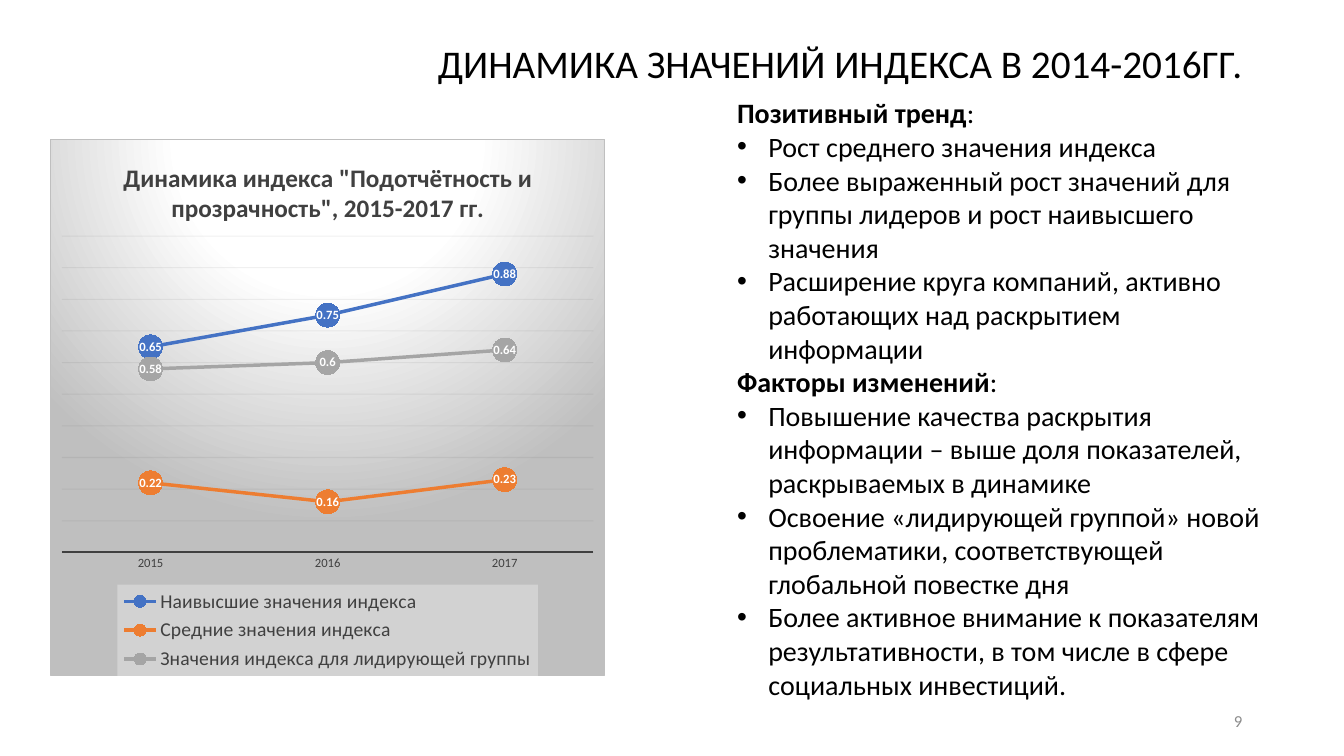
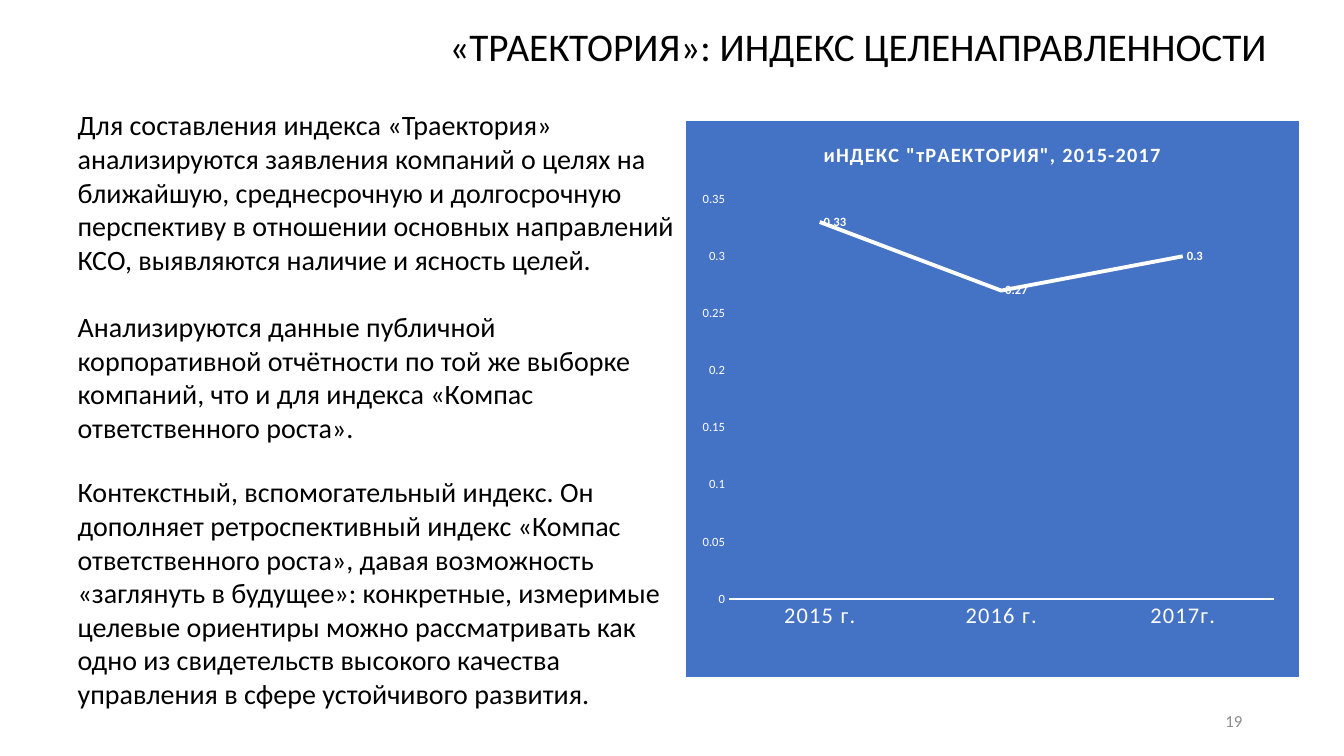
from pptx import Presentation
from pptx.chart.data import CategoryChartData
from pptx.dml.color import RGBColor
from pptx.enum.chart import XL_CHART_TYPE as ChartType
from pptx.enum.chart import XL_LABEL_POSITION as LabelPosition
from pptx.enum.chart import XL_LEGEND_POSITION as LegendPosition
from pptx.enum.chart import XL_MARKER_STYLE as MarkerStyle
from pptx.enum.chart import XL_TICK_MARK as TickMark
from pptx.enum.text import MSO_ANCHOR as Anchor
from pptx.enum.text import MSO_AUTO_SIZE as AutoSize
from pptx.enum.text import PP_ALIGN as Align
from pptx.oxml import parse_xml
from pptx.oxml.ns import nsdecls
from pptx.util import Inches, Pt

FONT = "Calibri"
BLACK = RGBColor(0x00, 0x00, 0x00)
WHITE = RGBColor(0xFF, 0xFF, 0xFF)
DARK_GREY = RGBColor(0x40, 0x40, 0x40)
NUMBER_GREY = RGBColor(0x8C, 0x8C, 0x8C)
GRID = RGBColor(0x0D, 0x0D, 0x0D)
SILVER = RGBColor(0xBF, 0xBF, 0xBF)
BLUE = RGBColor(0x44, 0x72, 0xC4)
ORANGE = RGBColor(0xED, 0x7D, 0x31)
GREY = RGBColor(0xA5, 0xA5, 0xA5)
NAMESPACES = nsdecls("a", "c")


def write_text(frame, text, tail="", size=20, color=BLACK, bold=False, align=None,
               line_spacing=None, before=0, bullet=False, plain=False):
    """Fill the empty first paragraph or add one; the tail is never bold."""
    paragraph = frame.paragraphs[-1]
    if paragraph.runs:
        paragraph = frame.add_paragraph()
    paragraph.alignment = align
    paragraph.line_spacing = line_spacing
    paragraph.space_before = Pt(before)
    for part, weight in ((text, bold), (tail, False)):
        if part:
            run = paragraph.add_run()
            run.text = part
            font = run.font
            font.name, font.size, font.bold = FONT, Pt(size), weight
            font.color.rgb = color
    if bullet or plain:
        properties = paragraph._p.get_or_add_pPr()
        indent = Inches(0.31) if bullet else 0
        properties.set("marL", str(indent))
        properties.set("indent", str(-indent))
        mark = '<a:buChar %s char="•"/>' if bullet else "<a:buNone %s/>"
        properties.append(parse_xml(mark % nsdecls("a")))


def add_line_chart(slide, box, kind, title, title_size, categories, series_list,
                   color, category_size, axis_width, label_position, top, step,
                   plot_box, fill_xml, border):
    """Add a line chart; series_list holds (name, values, colour, width)."""
    data = CategoryChartData()
    data.categories = categories
    for name, values, *_ in series_list:
        data.add_series(name, values)
    chart = slide.shapes.add_chart(kind, *[Inches(v) for v in box], data).chart
    chart.font.name, chart.font.size = FONT, Pt(10)
    chart.has_legend = False
    chart.has_title = True
    write_text(chart.chart_title.text_frame, title, size=title_size, color=color, bold=True)

    # Axes
    category_axis, value_axis = chart.category_axis, chart.value_axis
    for axis, size in ((category_axis, category_size), (value_axis, 9)):
        axis.major_tick_mark = axis.minor_tick_mark = TickMark.NONE
        font = axis.tick_labels.font
        font.name, font.size = FONT, Pt(size)
        font.color.rgb = color
    category_axis.format.line.color.rgb = color
    category_axis.format.line.width = Pt(axis_width)
    value_axis.format.line.fill.background()
    value_axis.has_major_gridlines = False
    value_axis.minimum_scale, value_axis.maximum_scale = 0, top
    value_axis.major_unit = step

    # Series and their labels
    for series, (_, _, line_color, width) in zip(chart.plots[0].series, series_list):
        series.smooth = False
        series.format.line.color.rgb = line_color
        series.format.line.width = Pt(width)
        labels = series.data_labels
        labels.show_value = True
        labels.position = label_position
        labels.font.name, labels.font.size, labels.font.bold = FONT, Pt(9), True
        labels.font.color.rgb = WHITE

    # Plot area and background
    plot_area = chart.element.xpath("c:chart/c:plotArea")[0]
    for layout in plot_area.xpath("c:layout"):
        plot_area.remove(layout)
    sizes = "".join(f'<c:{key} val="{value}"/>' for key, value in zip("xywh", plot_box))
    plot_area.insert(0, parse_xml(
        f'<c:layout {NAMESPACES}><c:manualLayout><c:layoutTarget val="inner"/>'
        f'<c:xMode val="edge"/><c:yMode val="edge"/>{sizes}</c:manualLayout></c:layout>'))
    chart.element.xpath("c:chart")[0].addnext(parse_xml(
        f'<c:spPr {NAMESPACES}>{fill_xml}<a:ln w="9525"><a:solidFill>'
        f'<a:srgbClr val="{border}"/></a:solidFill></a:ln></c:spPr>'))
    return chart


presentation = Presentation()
presentation.slide_width = Inches(13.33)
presentation.slide_height = Inches(7.5)

# Title, page number and body frame of both slides
pages = [
    ("ДИНАМИКА ЗНАЧЕНИЙ ИНДЕКСА В 2014-2016ГГ.", (0.92, 0.4, 11.5, 0.5), "9",
     (7.21, 0.9, 5.5, 6.5)),
    ("«ТРАЕКТОРИЯ»: ИНДЕКС ЦЕЛЕНАПРАВЛЕННОСТИ", (1.16, -0.24, 11.5, 1.45), "19",
     (0.67, 1.02, 6.12, 6.13)),
]
slides, bodies = [], []
for title_text, title_box, number, body_box in pages:
    slide = presentation.slides.add_slide(presentation.slide_layouts[1])
    title, body = slide.shapes.title, slide.placeholders[1]
    number_box = slide.shapes.add_textbox(Inches(9.42), Inches(6.95), Inches(3), Inches(0.4))
    for shape, box in ((title, title_box), (body, body_box)):
        shape.left, shape.top, shape.width, shape.height = [Inches(v) for v in box]
    for shape, anchor in ((title, Anchor.MIDDLE), (body, Anchor.TOP),
                          (number_box, Anchor.MIDDLE)):
        shape.text_frame.word_wrap = True
        shape.text_frame.auto_size = AutoSize.NONE
        shape.text_frame.vertical_anchor = anchor
    write_text(title.text_frame, title_text, size=28, align=Align.RIGHT, line_spacing=0.9)
    write_text(number_box.text_frame, number, size=12, color=NUMBER_GREY, align=Align.RIGHT)
    slides.append(slide)
    bodies.append(body.text_frame)

# Slide 1: trends and their causes
trends = [
    ("Позитивный тренд", [
        "Рост среднего значения индекса",
        "Более выраженный рост значений для группы лидеров и рост наивысшего значения",
        "Расширение круга компаний, активно работающих над раскрытием информации"]),
    ("Факторы изменений", [
        "Повышение качества раскрытия информации – выше доля показателей, "
        "раскрываемых в динамике",
        "Освоение «лидирующей группой» новой проблематики, соответствующей "
        "глобальной повестке дня",
        "Более активное внимание к показателям результативности, в том числе "
        "в сфере социальных инвестиций."]),
]
for heading, points in trends:
    write_text(bodies[0], heading, tail=":", bold=True, plain=True)
    for point in points:
        write_text(bodies[0], point, bullet=True)

# Slide 1: chart of three series
stops = "".join(f'<a:gs pos="{position}000"><a:srgbClr val="{color}"/></a:gs>'
                for position, color in ((0, WHITE), (39, WHITE), (100, SILVER)))
gradient = (f'<a:gradFill><a:gsLst>{stops}</a:gsLst><a:path path="circle">'
            '<a:fillToRect l="50000" t="-80000" r="50000" b="180000"/></a:path></a:gradFill>')
index_chart = add_line_chart(
    slides[0], (0.5, 1.38, 5.5, 5.33), ChartType.LINE_MARKERS,
    'Динамика индекса "Подотчётность и прозрачность", 2015-2017 гг.', 18,
    ["2015", "2016", "2017"],
    [("Наивысшие значения индекса", (0.65, 0.75, 0.88), BLUE, 2.5),
     ("Средние значения индекса", (0.22, 0.16, 0.23), ORANGE, 2.5),
     ("Значения индекса для лидирующей группы", (0.58, 0.6, 0.64), GREY, 2.5)],
    color=DARK_GREY, category_size=9, axis_width=1.5, label_position=LabelPosition.CENTER,
    top=1, step=0.1, plot_box=(0.02, 0.18, 0.96, 0.59), fill_xml=gradient, border=SILVER)
for series, color in zip(index_chart.plots[0].series, (BLUE, ORANGE, GREY)):
    series.marker.style, series.marker.size = MarkerStyle.CIRCLE, 17
    series.marker.format.fill.solid()
    series.marker.format.fill.fore_color.rgb = color
    series.marker.format.line.fill.background()

# Faint grid lines without a value axis
value_axis = index_chart.value_axis
value_axis.visible = False
value_axis.has_major_gridlines = True
value_axis.major_gridlines.format.line.color.rgb = GRID
value_axis.major_gridlines.format.line.width = Pt(0.75)
grid_color = index_chart.element.xpath(".//c:majorGridlines//a:srgbClr")[0]
grid_color.append(parse_xml(f'<a:alpha {NAMESPACES} val="5000"/>'))

# Legend on a translucent panel
index_chart.has_legend = True
legend = index_chart.legend
legend.position = LegendPosition.BOTTOM
legend.include_in_layout = False
legend.font.name, legend.font.size = FONT, Pt(14)
legend.font.color.rgb = DARK_GREY
legend_element = index_chart.element.xpath("c:chart/c:legend")[0]
for layout in legend_element.xpath("c:layout"):
    legend_element.remove(layout)
legend_sizes = "".join(f'<c:{key} val="{value}"/>'
                       for key, value in zip("xywh", (0.12, 0.83, 0.76, 0.17)))
legend_element.xpath("c:legendPos")[0].addnext(parse_xml(
    f'<c:layout {NAMESPACES}><c:manualLayout><c:xMode val="edge"/><c:yMode val="edge"/>'
    f'{legend_sizes}</c:manualLayout></c:layout>'))
legend_element.xpath("c:overlay")[0].addnext(parse_xml(
    f'<c:spPr {NAMESPACES}><a:solidFill><a:srgbClr val="F2F2F2"><a:alpha val="39000"/>'
    '</a:srgbClr></a:solidFill></c:spPr>'))

# Slide 2: description of the index
descriptions = [
    (0, "Для составления индекса «Траектория» анализируются заявления компаний о целях "
        "на ближайшую, среднесрочную и долгосрочную перспективу в отношении основных "
        "направлений КСО, выявляются наличие и ясность целей."),
    (24, "Анализируются данные публичной корпоративной отчётности по той же выборке "
         "компаний, что и для индекса «Компас ответственного роста»."),
    (22, "Контекстный, вспомогательный индекс. Он дополняет ретроспективный индекс "
         "«Компас ответственного роста», давая возможность «заглянуть в будущее»: "
         "конкретные, измеримые целевые ориентиры можно рассматривать как одно из "
         "свидетельств высокого качества управления в сфере устойчивого развития."),
]
for gap, description in descriptions:
    write_text(bodies[1], description, before=gap, plain=True)

# Slide 2: chart of one series, with spaced title and categories
outlook_chart = add_line_chart(
    slides[1], (6.8, 1.2, 6.08, 5.52), ChartType.LINE,
    'иНДЕКС "тРАЕКТОРИЯ", 2015-2017', 14.5, ["2015 г.", "2016 г.", "2017г."],
    [("Series 1", (0.33, 0.27, 0.3), WHITE, 2.75)],
    color=WHITE, category_size=16, axis_width=1, label_position=LabelPosition.RIGHT,
    top=0.35, step=0.05, plot_box=(0.07, 0.14, 0.89, 0.72),
    fill_xml=f'<a:solidFill><a:srgbClr val="{BLUE}"/></a:solidFill>', border=BLUE)
for font_element in outlook_chart.element.xpath(".//c:title//a:rPr | .//c:catAx//a:defRPr"):
    font_element.set("spc", "100")

presentation.save("out.pptx")
